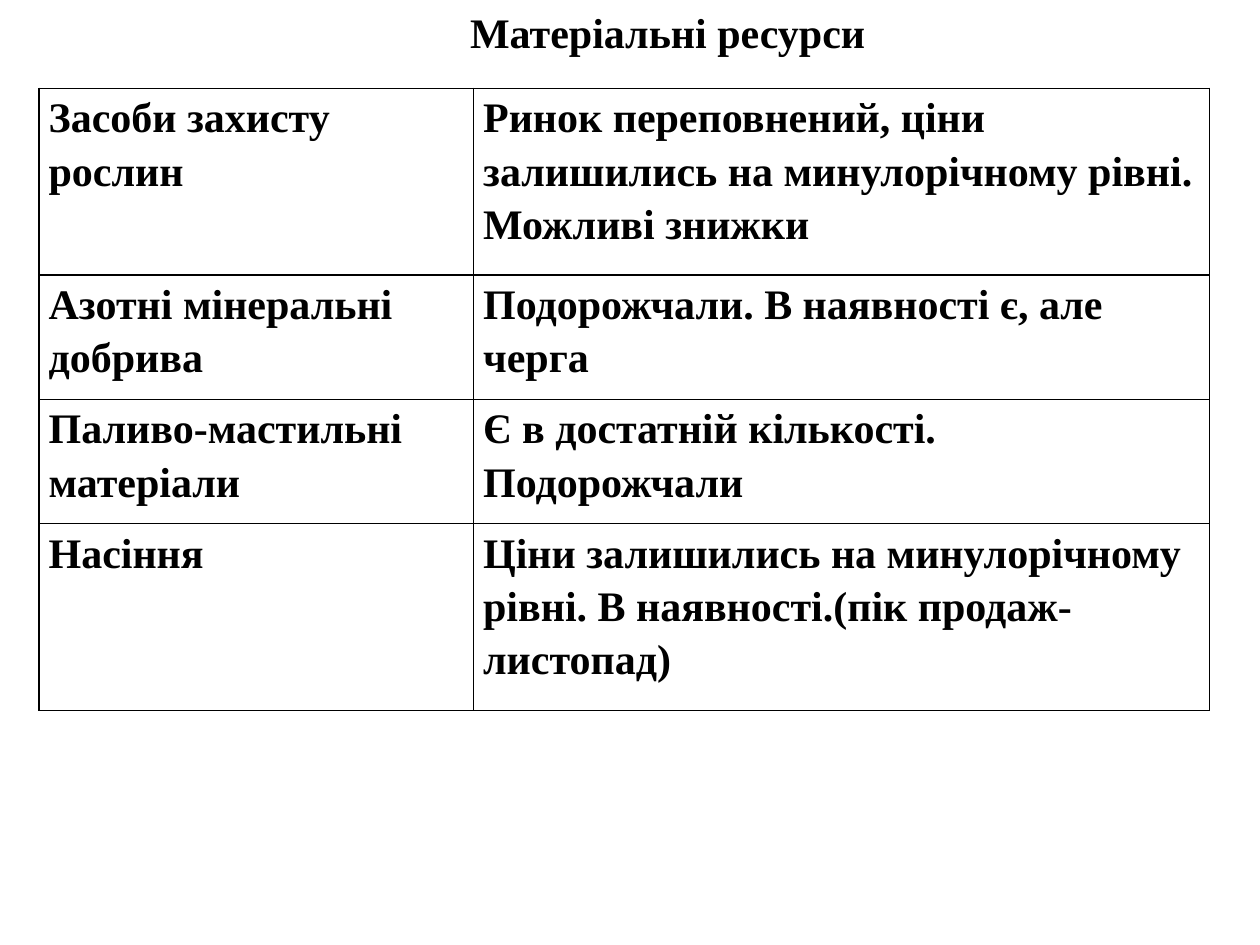
from lxml import etree
from pptx import Presentation
from pptx.dml.color import RGBColor
from pptx.enum import text
from pptx.oxml import ns
from pptx.util import Cm, Pt

# Content
TITLE = "Матеріальні ресурси"
RESOURCES = [
    ("Засоби захисту рослин",
     "Ринок переповнений, ціни залишились на минулорічному рівні. Можливі знижки"),
    ("Азотні мінеральні добрива", "Подорожчали. В наявності є, але черга"),
    ("Паливо-мастильні матеріали", "Є в достатній кількості. Подорожчали"),
    ("Насіння",
     "Ціни залишились на минулорічному рівні. В наявності.(пік продаж-листопад)"),
]

# Format
BLACK = RGBColor(0, 0, 0)
FONT = "Times New Roman"
COLUMN_WIDTHS = [Cm(8.76), Cm(14.83)]
ROW_HEIGHTS = [Cm(3.76), Cm(2.51), Cm(2.51), Cm(3.76)]


def write(frame, wording, align=text.PP_ALIGN.LEFT, spacing=1.0, size=24):
    para = frame.paragraphs[0]
    para.alignment = align
    para.line_spacing = spacing
    span = para.add_run()
    span.text = wording
    span.font.name = FONT
    span.font.size = Pt(size)
    span.font.bold = True
    span.font.color.rgb = BLACK
    return para


def add_borders(cell, width=Pt(1)):
    properties = cell._tc.get_or_add_tcPr()
    for position, side in enumerate(("lnL", "lnR", "lnT", "lnB")):
        line = etree.Element(ns.qn("a:" + side), w=str(width))
        fill = etree.SubElement(line, ns.qn("a:solidFill"))
        etree.SubElement(fill, ns.qn("a:srgbClr"), val=str(BLACK))
        properties.insert(position, line)


deck = Presentation()
deck.slide_width, deck.slide_height = Cm(25.4), Cm(19.05)
page = deck.slides.add_slide(deck.slide_layouts[5])

# Title
box = page.shapes.title
box.left, box.top, box.width, box.height = Cm(7.67), Cm(0), Cm(10.08), Cm(1.27)
frame = box.text_frame
frame.word_wrap = False
frame.auto_size = text.MSO_AUTO_SIZE.SHAPE_TO_FIT_TEXT
frame.vertical_anchor = text.MSO_ANCHOR.MIDDLE
heading = write(frame, TITLE, align=text.PP_ALIGN.CENTER)
heading._p.get_or_add_pPr().set("indent", str(Cm(1.5)))

# Resources table
table = page.shapes.add_table(
    len(RESOURCES), len(COLUMN_WIDTHS), Cm(0.79), Cm(1.78),
    sum(COLUMN_WIDTHS), sum(ROW_HEIGHTS)).table
table.first_row = table.horz_banding = False
for column, width in zip(table.columns, COLUMN_WIDTHS):
    column.width = width
for row, height, wordings in zip(table.rows, ROW_HEIGHTS, RESOURCES):
    row.height = height
    for cell, wording in zip(row.cells, wordings):
        cell.margin_left = cell.margin_right = Cm(0.19)
        cell.margin_top = cell.margin_bottom = Cm(0)
        cell.fill.background()
        add_borders(cell)
        write(cell.text_frame, wording, spacing=1.15)

deck.save("out.pptx")
